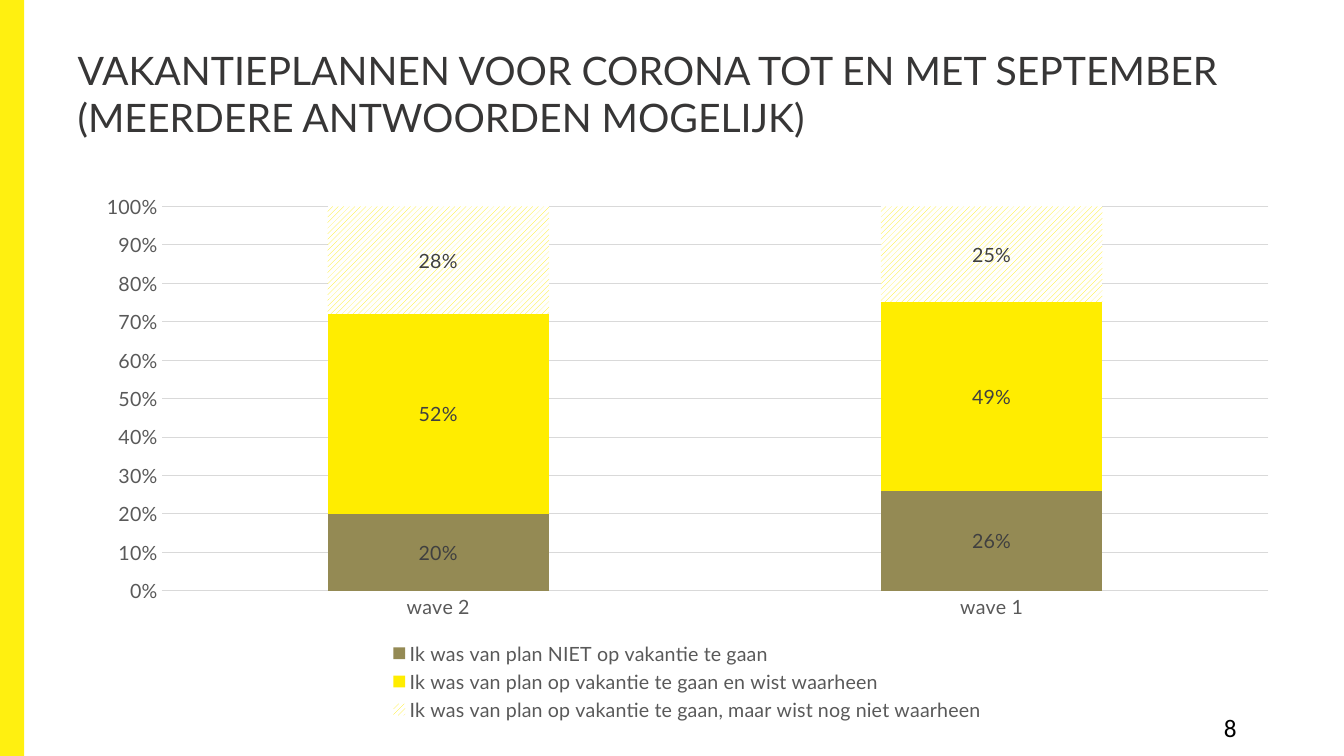
from pptx import Presentation
from pptx.chart.data import CategoryChartData
from pptx.dml.color import RGBColor
from pptx.enum.chart import (XL_CHART_TYPE as ChartType, XL_LABEL_POSITION as LabelPosition,
                             XL_LEGEND_POSITION as LegendPosition, XL_TICK_MARK as TickMark)
from pptx.enum.dml import MSO_PATTERN as Pattern
from pptx.enum.shapes import MSO_SHAPE as Shape
from pptx.enum.text import MSO_ANCHOR as Anchor, MSO_AUTO_SIZE as AutoSize, PP_ALIGN as Align
from pptx.util import Inches, Pt

BAR_YELLOW = RGBColor(0xFF, 0xF0, 0x10)
YELLOW = RGBColor(0xFF, 0xED, 0x00)
OLIVE = RGBColor(0x94, 0x8A, 0x54)
WHITE = RGBColor(0xFF, 0xFF, 0xFF)
BLACK = RGBColor(0, 0, 0)
TITLE_GRAY = RGBColor(0x37, 0x36, 0x36)
LABEL_GRAY = RGBColor(0x40, 0x40, 0x40)
AXIS_GRAY = RGBColor(0x59, 0x59, 0x59)
GRID_GRAY = RGBColor(0xD9, 0xD9, 0xD9)

WAVES = ["wave 2", "wave 1"]
ANSWERS = [
    ("Ik was van plan NIET op vakantie te gaan", (0.2, 0.26)),
    ("Ik was van plan op vakantie te gaan en wist waarheen", (0.52, 0.49)),
    ("Ik was van plan op vakantie te gaan, maar wist nog niet waarheen", (0.28, 0.25)),
]


def to_inches(box):
    return [Inches(length) for length in box]


def set_font(font, color, size=14, name="Lato"):
    font.name = name
    font.size = Pt(size)
    font.color.rgb = color


def style_line(line):
    line.color.rgb = GRID_GRAY
    line.width = Pt(0.75)


def add_side_bar(slide, box):
    bar = slide.shapes.add_shape(Shape.RECTANGLE, *to_inches(box))
    bar.shadow.inherit = False
    bar.fill.solid()
    bar.fill.fore_color.rgb = BAR_YELLOW
    bar.line.fill.background()


def add_page_number(slide, box, number):
    text_frame = slide.shapes.add_textbox(*to_inches(box)).text_frame
    text_frame.word_wrap = True
    paragraph = text_frame.paragraphs[0]
    paragraph.text = number
    set_font(paragraph.font, BLACK, 18, "Calibri")


def place_title(slide, box, text):
    title = slide.shapes.title
    title.left, title.top, title.width, title.height = to_inches(box)
    text_frame = title.text_frame
    text_frame.auto_size = AutoSize.NONE
    text_frame.vertical_anchor = Anchor.MIDDLE
    paragraph = text_frame.paragraphs[0]
    paragraph.text = text
    paragraph.alignment = Align.LEFT
    set_font(paragraph.font, TITLE_GRAY, 28)


def style_series(plot):
    solid_colors = (OLIVE, YELLOW)
    for series, color in zip(plot.series, solid_colors):
        series.format.fill.solid()
        series.format.fill.fore_color.rgb = color

    # Hatched fill for the undecided answer
    hatch = plot.series[len(solid_colors)].format.fill
    hatch.patterned()
    hatch.pattern = Pattern.WIDE_UPWARD_DIAGONAL
    hatch.fore_color.rgb = YELLOW
    hatch.back_color.rgb = WHITE

    for series in plot.series:
        labels = series.data_labels
        labels.show_value = True
        labels.position = LabelPosition.CENTER
        labels.number_format = "0%"
        labels.number_format_is_linked = False
        set_font(labels.font, LABEL_GRAY)


def style_axes(chart):
    for axis in (chart.category_axis, chart.value_axis):
        axis.major_tick_mark = axis.minor_tick_mark = TickMark.NONE
        set_font(axis.tick_labels.font, AXIS_GRAY)
    style_line(chart.category_axis.format.line)

    value_axis = chart.value_axis
    value_axis.format.line.fill.background()
    value_axis.has_major_gridlines = True
    style_line(value_axis.major_gridlines.format.line)
    value_axis.tick_labels.number_format = "0%"
    value_axis.tick_labels.number_format_is_linked = False


def add_holiday_chart(slide, box):
    data = CategoryChartData(number_format="0%")
    data.categories = WAVES
    for name, values in ANSWERS:
        data.add_series(name, values)
    chart = slide.shapes.add_chart(ChartType.COLUMN_STACKED_100, *to_inches(box), data).chart
    chart.has_title = False
    set_font(chart.font, BLACK)

    plot = chart.plots[0]
    plot.gap_width = 150
    plot.overlap = 100
    plot.vary_by_categories = False
    style_series(plot)
    style_axes(chart)

    # Legend below the plot
    chart.has_legend = True
    chart.legend.position = LegendPosition.BOTTOM
    chart.legend.include_in_layout = False
    set_font(chart.legend.font, AXIS_GRAY)


def main():
    presentation = Presentation()
    presentation.slide_width = Inches(13.33)
    presentation.slide_height = Inches(7.5)
    slide = presentation.slides.add_slide(presentation.slide_layouts.get_by_name("Title Only"))

    add_side_bar(slide, (0, 0, 0.24, 7.5))
    add_page_number(slide, (12.04, 7.02, 0.63, 0.4), "8")
    place_title(slide, (0.67, 0.3, 12, 1.25),
                "VAKANTIEPLANNEN VOOR CORONA TOT EN MET SEPTEMBER (MEERDERE ANTWOORDEN MOGELIJK)")
    add_holiday_chart(slide, (0.82, 1.82, 12, 5.38))
    presentation.save("out.pptx")


if __name__ == "__main__":
    main()
